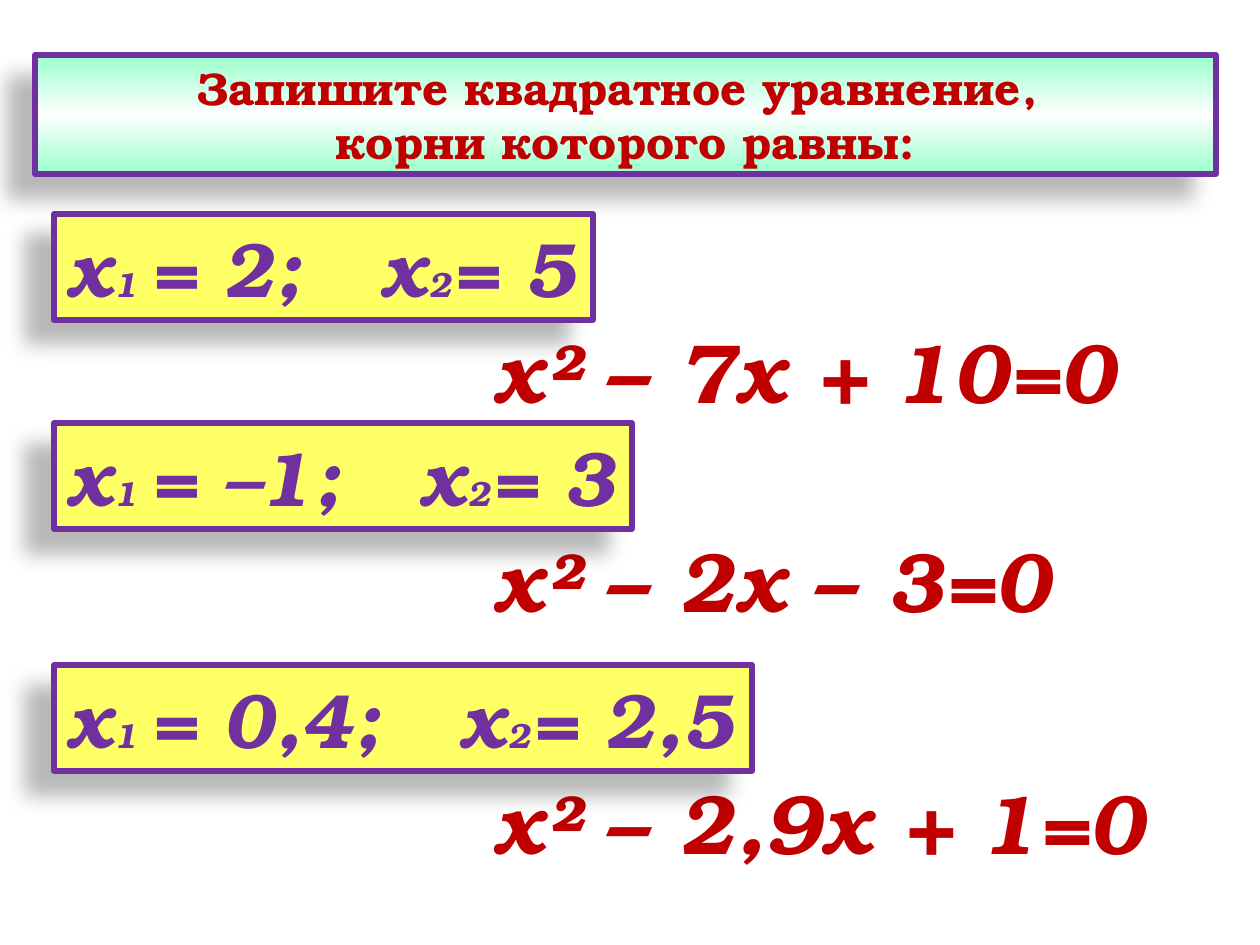
from copy import deepcopy
from dataclasses import dataclass

from lxml.etree import SubElement
from pptx import Presentation
from pptx.dml.color import RGBColor as RGB
from pptx.enum.shapes import MSO_SHAPE as Shape
from pptx.enum.text import MSO_ANCHOR as Anchor, MSO_AUTO_SIZE as AutoSize, PP_ALIGN as Align
from pptx.oxml.ns import qn
from pptx.util import Emu, Pt

EMU_PER_PX = 914400 / 126


def px(length):
    return Emu(round(length * EMU_PER_PX))


@dataclass(frozen=True)
class Theme:
    font: str = "TeX Gyre Bonum"
    red: RGB = RGB(0xC0, 0x00, 0x00)
    purple: RGB = RGB(0x70, 0x30, 0xA0)
    yellow: RGB = RGB(0xFF, 0xFF, 0x66)
    mint: RGB = RGB(0x99, 0xFF, 0xCC)
    white: RGB = RGB(0xFF, 0xFF, 0xFF)
    title_size: int = 26
    roots_size: int = 44
    index_size: int = 20
    equation_size: int = 48
    border: int = 3


class EquationSlide:
    def __init__(self, deck, theme):
        self.theme = theme
        self.slide = deck.slides.add_slide(deck.slide_layouts[5])

    def style_run(self, run, size, color, italic=False):
        font = run.font
        font.name, font.size, font.bold, font.italic = self.theme.font, Pt(size), True, italic
        font.color.rgb = color

    def frame(self, panel):
        """Give a panel its purple border and its shadow to the lower left."""
        panel.line.color.rgb = self.theme.purple
        panel.line.width = Pt(self.theme.border)
        effects = panel._element.spPr.find(qn("a:effectLst"))
        if effects is None:
            effects = SubElement(panel._element.spPr, qn("a:effectLst"))
        shadow = SubElement(effects, qn("a:outerShdw"), blurRad="150000",
                            dist="250000", dir="8460000", algn="tr", rotWithShape="0")
        color = SubElement(shadow, qn("a:srgbClr"), val="000000")
        SubElement(color, qn("a:alpha"), val="28000")

    def title(self, text, left, top, width, height):
        heading = self.slide.shapes.title
        heading.left, heading.top, heading.width, heading.height = map(
            px, (left, top, width, height))
        heading.fill.gradient()
        stops = heading._element.spPr.find(".//" + qn("a:gsLst"))
        stops.insert(1, deepcopy(stops[0]))
        colors = (self.theme.mint, self.theme.white, self.theme.mint)
        for stop, position, color in zip(heading.fill.gradient_stops, (0, 0.5, 1), colors):
            stop.position = position
            stop.color.rgb = color
        heading.fill.gradient_angle = 90
        self.frame(heading)
        words = heading.text_frame
        words.text = text
        words.word_wrap = False
        words.auto_size = AutoSize.NONE
        words.vertical_anchor = Anchor.MIDDLE
        for line in words.paragraphs:
            line.alignment = Align.CENTER
            for run in line.runs:
                self.style_run(run, self.theme.title_size, self.theme.red)

    def roots(self, first, second, left, top, width, height, second_at):
        """Show both roots; the second starts at a tab stop."""
        panel = self.slide.shapes.add_shape(
            Shape.RECTANGLE, *map(px, (left, top, width, height)))
        panel.shadow.inherit = False
        panel.fill.solid()
        panel.fill.fore_color.rgb = self.theme.yellow
        self.frame(panel)
        words = panel.text_frame
        words.word_wrap = True
        words.margin_right = 0
        words.vertical_anchor = Anchor.TOP
        line = words.paragraphs[0]
        line.alignment = Align.LEFT
        tabs = SubElement(line._p.get_or_add_pPr(), qn("a:tabLst"))
        SubElement(tabs, qn("a:tab"), pos=str(px(second_at)), algn="l")
        large, small = self.theme.roots_size, self.theme.index_size
        for text, size in (("х", large), ("1 ", small), (f"= {first};\tх", large),
                           ("2", small), (f"= {second}", large)):
            run = line.add_run()
            run.text = text
            self.style_run(run, size, self.theme.purple, italic=True)

    def equation(self, parts, left, top, width, height):
        """Write the equation in italics, with upright minus signs."""
        box = self.slide.shapes.add_textbox(*map(px, (left, top, width, height)))
        box.text_frame.word_wrap = False
        line = box.text_frame.paragraphs[0]
        for part in parts:
            run = line.add_run()
            run.text = part
            self.style_run(run, self.theme.equation_size, self.theme.red, italic="–" not in part)


TASKS = [
    # top, roots, roots width, second root at, equation, equation width
    (214, ("2", "5"), 539, 314, ("х² ", "– ", "7х + 10=0"), 655),
    (423, ("–1", "3"), 578, 353, ("х² ", "– ", "2х ", "–", " 3=0"), 590),
    (665, ("0,4", "2,5"), 698, 393, ("х² ", "– ", "2,9х + 1=0"), 684),
]


def main():
    deck = Presentation()
    deck.slide_width, deck.slide_height = px(1260), px(945)
    page = EquationSlide(deck, Theme())
    page.title("Запишите квадратное уравнение, \nкорни которого равны:", 35, 55, 1181, 119)
    for top, roots, roots_width, second_at, equation, equation_width in TASKS:
        page.equation(equation, 481, top + 99, equation_width, 115)
        page.roots(*roots, 54, top, roots_width, 106, second_at)
    deck.save("out.pptx")


if __name__ == "__main__":
    main()
